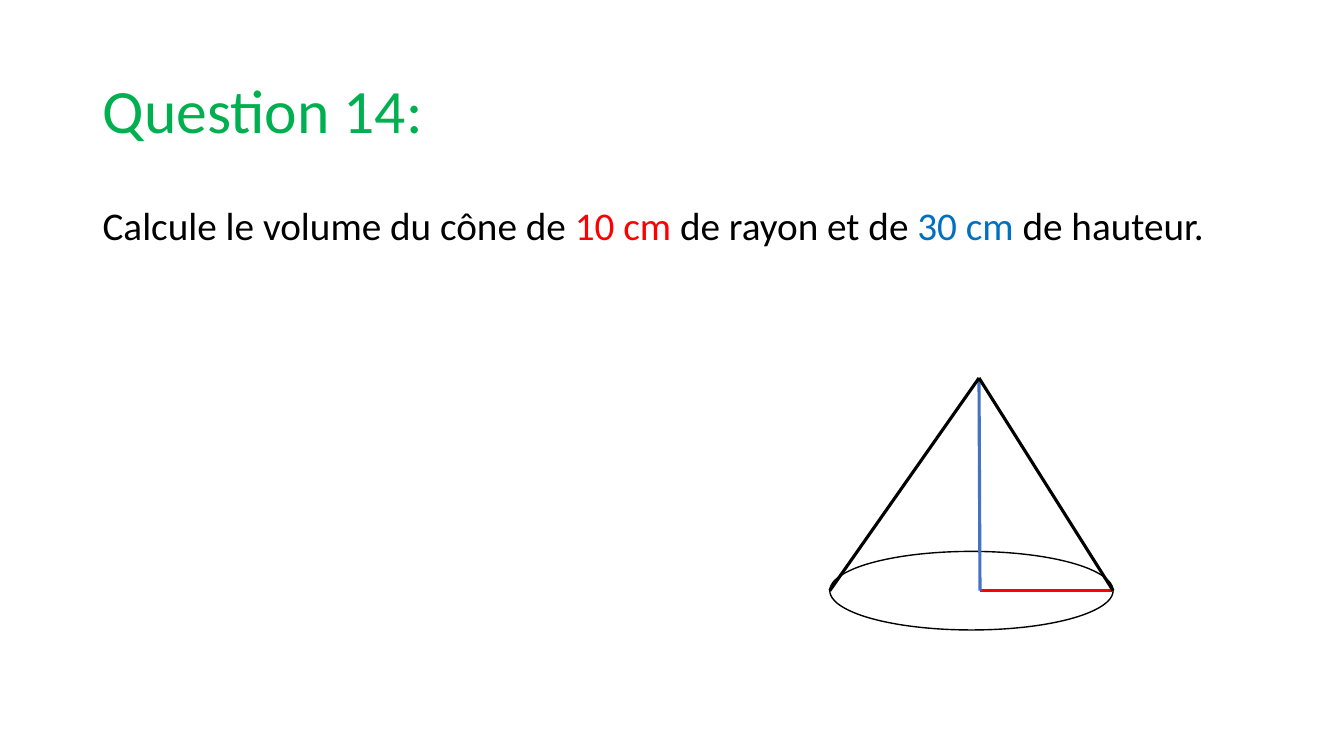
import pptx
import pptx.util
import pptx.dml.color
import pptx.enum.shapes
import pptx.enum.text
import pptx.oxml.ns
import lxml.etree

Inches = pptx.util.Inches
Pt = pptx.util.Pt

HUES = {
    "title": "00B050",
    "ink": "000000",
    "radius": "FF0000",
    "radius text": "FF0000",
    "height": "4472C4",
    "height text": "0070C0",
}

# Key points of the cone, in inches
APEX = (9.71, 3.75)
FOOT = (9.72, 5.86)
LEFT = (8.23, 5.86)
RIGHT = (11.04, 5.86)
DEPTH = 0.78

TASK = [
    ("Calcule le volume du cône de ", "ink"),
    ("10 cm ", "radius text"),
    ("de rayon et de ", "ink"),
    ("30 cm ", "height text"),
    ("de hauteur.", "ink"),
]

EDGES = [
    (FOOT, RIGHT, "radius"),
    (APEX, FOOT, "height"),
    (APEX, LEFT, "ink"),
    (APEX, RIGHT, "ink"),
]


def shade(hue):
    return pptx.dml.color.RGBColor.from_string(HUES[hue])


def apply(item, form):
    for name, value in form.items():
        setattr(item, name, value)


def write(box, runs, size, anchor):
    """Fill the box with one paragraph of (text, hue) runs."""
    frame = box.text_frame
    apply(frame, {
        "word_wrap": True,
        "vertical_anchor": anchor,
        "auto_size": pptx.enum.text.MSO_AUTO_SIZE.NONE,
    })
    para = frame.paragraphs[0]
    apply(para, {
        "line_spacing": 0.9,
        "alignment": pptx.enum.text.PP_ALIGN.LEFT,
    })
    for text, hue in runs:
        run = para.add_run()
        run.text = text
        apply(run.font, {"name": "Calibri", "size": Pt(size)})
        run.font.color.rgb = shade(hue)
    return para


def add_title(slide):
    title = slide.shapes.title
    apply(title, {
        "left": Inches(0.92), "top": Inches(0.4),
        "width": Inches(11.5), "height": Inches(1.45),
    })
    write(title, [("Question 14:", "title")], 44,
          pptx.enum.text.MSO_ANCHOR.MIDDLE)


def add_task(slide):
    box = slide.shapes.add_textbox(
        Inches(0.92), Inches(2), Inches(11.5), Inches(4.76))
    para = write(box, TASK, 28, pptx.enum.text.MSO_ANCHOR.TOP)
    para.space_before = Pt(10)


def add_base(slide):
    base = slide.shapes.add_shape(
        pptx.enum.shapes.MSO_SHAPE.OVAL,
        Inches(LEFT[0]), Inches(LEFT[1] - DEPTH / 2),
        Inches(RIGHT[0] - LEFT[0]), Inches(DEPTH))
    base.shadow.inherit = False
    base.fill.background()
    base.line.color.rgb = shade("ink")
    base.line.width = Pt(1)


def add_edge(slide, start, end, hue):
    edge = slide.shapes.add_connector(
        pptx.enum.shapes.MSO_CONNECTOR.STRAIGHT,
        *[Inches(n) for n in start + end])
    edge.line.color.rgb = shade(hue)
    edge.line.width = Pt(2.25)
    lxml.etree.SubElement(
        edge._element.spPr, pptx.oxml.ns.qn("a:effectLst"))


def main():
    deck = pptx.Presentation()
    apply(deck, {"slide_width": Inches(13.33), "slide_height": Inches(7.5)})
    slide = deck.slides.add_slide(deck.slide_layouts[5])
    add_title(slide)
    add_task(slide)
    add_base(slide)
    for start, end, hue in EDGES:
        add_edge(slide, start, end, hue)
    deck.save("out.pptx")


if __name__ == "__main__":
    main()
